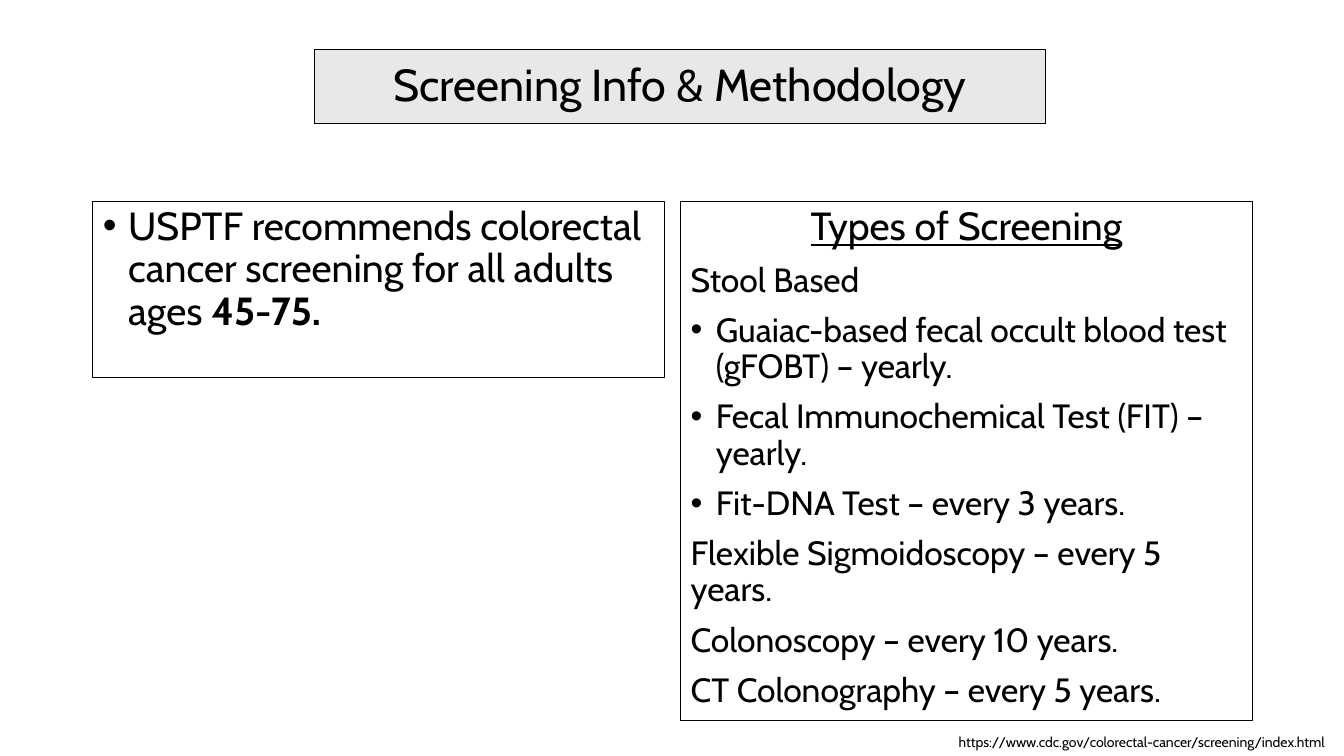
from lxml import etree
from pptx import Presentation
from pptx.dml.color import RGBColor
from pptx.enum.text import MSO_ANCHOR, MSO_AUTO_SIZE, PP_ALIGN
from pptx.oxml.ns import qn
from pptx.util import Inches, Pt

LEFT, CENTER = PP_ALIGN.LEFT, PP_ALIGN.CENTER
TOP, MIDDLE = MSO_ANCHOR.TOP, MSO_ANCHOR.MIDDLE
NO_FIT = MSO_AUTO_SIZE.NONE

WIDE, HIGH = 13.33, 7.5
COLORS = {"ink": "000000", "band": "E8E8E8"}
FACE = "Cabin"
TWO_CONTENT = 3

# Grid: two equal columns with a narrow gap
EDGE, COL, GAP, ROW = 0.92, 5.67, 0.16, 2

# Each line: runs of (text, font values), size, bulleted, alignment
ADVICE = [
    ([("USPTF recommends colorectal cancer screening for all adults ages ", {}),
      ("45-75.", {"bold": True})], 28, True, LEFT),
]
HEAD = ([("Types of Screening", {"underline": True})], 28, False, CENTER)
TESTS = [
    ("Stool Based", False),
    ("Guaiac-based fecal occult blood test (gFOBT) – yearly.", True),
    ("Fecal Immunochemical Test (FIT) – yearly.", True),
    ("Fit-DNA Test – every 3 years.", True),
    ("Flexible Sigmoidoscopy – every 5 years.", False),
    ("Colonoscopy – every 10 years.", False),
    ("CT Colonography – every 5 years.", False),
]
SOURCE = "https://www.cdc.gov/colorectal-cancer/screening/index.html"


def color(name):
    return RGBColor.from_string(COLORS[name])


def assign(item, values):
    for key, value in values.items():
        setattr(item, key, value)


def place(shape, left, top, width, height):
    assign(shape, {"left": Inches(left), "top": Inches(top),
                   "width": Inches(width), "height": Inches(height)})


def frame(shape, fill=None):
    """Give a placeholder its thin outline and optional fill."""
    if fill:
        shape.fill.solid()
        shape.fill.fore_color.rgb = color(fill)
    else:
        shape.fill.background()
    shape.line.color.rgb = color("ink")
    shape.line.width = Pt(0.75)


def add_run(para, text, size, extra):
    run = para.add_run()
    run.text = text
    assign(run.font, {"name": FACE, "size": Pt(size), **extra})
    run.font.color.rgb = color("ink")


def set_bullet(para, shown):
    props = para._p.get_or_add_pPr()
    indent = Inches(0.25) if shown else 0
    props.set("marL", str(indent))
    props.set("indent", str(-indent))
    if shown:
        font = etree.SubElement(props, qn("a:buFont"))
        font.set("typeface", "Arial")
        etree.SubElement(props, qn("a:buChar")).set("char", "•")
    else:
        etree.SubElement(props, qn("a:buNone"))


def write(shape, lines, anchor=TOP, before=10):
    body = shape.text_frame
    assign(body, {"word_wrap": True, "auto_size": NO_FIT,
                  "vertical_anchor": anchor})
    for num, (runs, size, mark, align) in enumerate(lines):
        para = body.add_paragraph() if num else body.paragraphs[0]
        assign(para, {"alignment": align, "line_spacing": 0.9,
                      "space_before": Pt(before)})
        set_bullet(para, mark)
        for text, extra in runs:
            add_run(para, text, size, extra)


def add_note(slide, text, left, top, width, height):
    box = slide.shapes.add_textbox(*map(Inches, (left, top, width, height)))
    box.text_frame.word_wrap = True
    add_run(box.text_frame.paragraphs[0], text, 10, {})


def main():
    deck = Presentation()
    assign(deck, {"slide_width": Inches(WIDE), "slide_height": Inches(HIGH)})
    slide = deck.slides.add_slide(deck.slide_layouts[TWO_CONTENT])
    title, advice, types = slide.placeholders

    # Title band
    place(title, 3.12, 0.49, 7.25, 0.74)
    frame(title, "band")
    heading = ([("Screening Info & Methodology", {})], 32, False, CENTER)
    write(title, [heading], MIDDLE, 0)

    # Two columns
    tests = [([(text, {})], 24, mark, LEFT) for text, mark in TESTS]
    columns = [(advice, ADVICE, 1.75), (types, [HEAD, *tests], 5.15)]
    for num, (shape, lines, height) in enumerate(columns):
        place(shape, EDGE + num * (COL + GAP), ROW, COL, height)
        frame(shape)
        write(shape, lines)

    # Source line in the bottom right corner
    width, height = 3.92, 0.27
    add_note(slide, SOURCE, WIDE - width, HIGH - height, width, height)

    deck.save("out.pptx")


if __name__ == "__main__":
    main()
